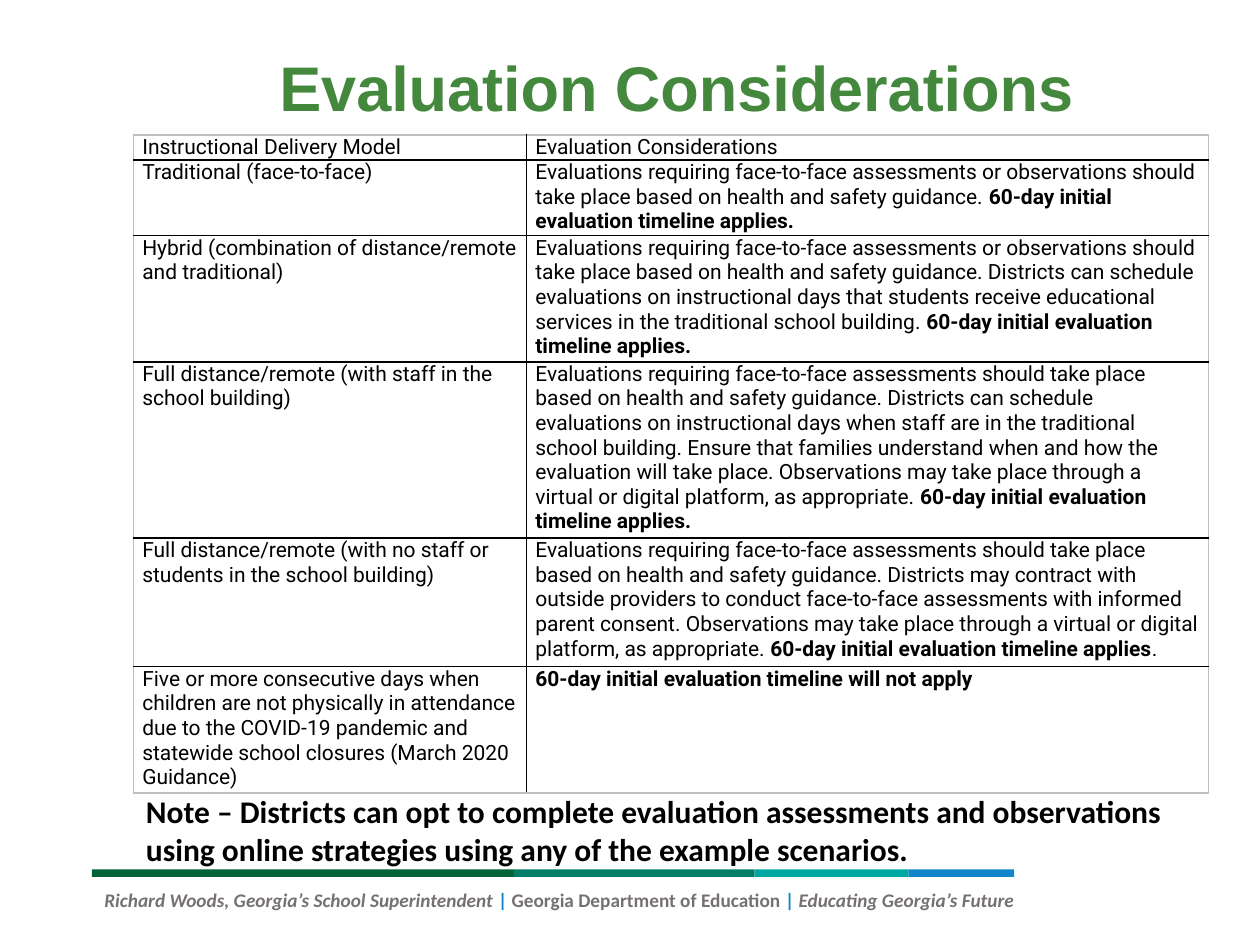
from lxml import etree
from pptx import Presentation
from pptx.dml.color import RGBColor
from pptx.enum import shapes, text
from pptx.oxml.ns import qn
from pptx.util import Inches, Pt

THEME = {
    "title": {"font": "Arial", "size": 36, "color": "44883E", "bold": True},
    "cell": {"font": "Roboto", "size": 12, "color": "000000"},
    "note": {"font": "Calibri", "size": 18, "color": "000000", "bold": True},
    "foot": {"font": "Calibri", "size": 11, "color": "767171", "bold": True},
    "bar": "1186CA",
    "grid": "000000",
    "frame": "BFBFBF",
}

TITLE = "Evaluation Considerations"
NOTE = ("Note – Districts can opt to complete evaluation assessments and observations "
        "using online strategies using any of the example scenarios.")
# Footer runs: text, italic, color
FOOTER = [
    ("Richard Woods, Georgia’s School Superintendent ", True, THEME["foot"]["color"]),
    ("|", False, THEME["bar"]),
    (" Georgia Department of Education ", False, THEME["foot"]["color"]),
    ("| ", False, THEME["bar"]),
    ("Educating Georgia’s Future", True, THEME["foot"]["color"]),
]
STRIPES = [(3.35, "006436"), (1.91, "007E67"), (1.22, "00A9A1"), (0.84, "1186CA")]

OBSERVE = "Evaluations requiring face-to-face assessments or observations should "
ASSESS = "Evaluations requiring face-to-face assessments should "
SAFETY = "take place based on health and safety guidance. "
DIGITAL = ("Observations may take place through a virtual or digital platform, "
           "as appropriate. ")
LIMIT = "60-day initial evaluation timeline applies"

# Row height, model, then considerations as alternating plain and bold parts
ROWS = [
    (0.17, "Instructional Delivery Model", ["Evaluation Considerations"]),
    (0.51, "Traditional (face-to-face)", [OBSERVE + SAFETY, LIMIT + "."]),
    (0.85, "Hybrid (combination of distance/remote and traditional)",
     [OBSERVE + SAFETY + "Districts can schedule evaluations on instructional days "
      "that students receive educational services in the traditional school building. ",
      LIMIT + "."]),
    (1.19, "Full distance/remote (with staff in the school building)",
     [ASSESS + SAFETY + "Districts can schedule evaluations on instructional days "
      "when staff are in the traditional school building. Ensure that families "
      "understand when and how the evaluation will take place. " + DIGITAL,
      LIMIT + "."]),
    (1.02, "Full distance/remote (with no staff or students in the school building)",
     [ASSESS + SAFETY + "Districts may contract with outside providers to conduct "
      "face-to-face assessments with informed parent consent. " + DIGITAL,
      LIMIT, "."]),
    (0.85, "Five or more consecutive days when children are not physically in attendance "
     "due to the COVID-19 pandemic and statewide school closures (March 2020 Guidance)",
     ["", "60-day initial evaluation timeline will not apply"]),
]
COLS = [3.12, 5.41]
LEFT = 1.06


def style(font, look, **extra):
    look = {**look, **extra}
    font.name = look["font"]
    font.size = Pt(look["size"])
    font.bold = look.get("bold", False)
    font.italic = look.get("italic", False)
    font.color.rgb = RGBColor.from_string(look["color"])


def add_run(para, words, look, **extra):
    run = para.add_run()
    run.text = words
    style(run.font, look, **extra)


def add_box(slide, *place):
    frame = slide.shapes.add_textbox(*map(Inches, place)).text_frame
    frame.word_wrap = True
    return frame


def border(cell, outer):
    """Line all four sides; sides named in outer get the frame color."""
    props = cell._tc.get_or_add_tcPr()
    for side in "LRTB":
        line = etree.SubElement(props, qn(f"a:ln{side}"), w=str(Pt(1)))
        fill = etree.SubElement(line, qn("a:solidFill"))
        color = THEME["frame" if side in outer else "grid"]
        etree.SubElement(fill, qn("a:srgbClr"), val=color)


def add_grid(slide):
    high = sum(row[0] for row in ROWS)
    table = slide.shapes.add_table(
        len(ROWS), len(COLS), Inches(LEFT), Inches(1.07),
        Inches(sum(COLS)), Inches(high)).table
    table.first_row = table.horz_banding = False
    for col, wide in zip(table.columns, COLS):
        col.width = Inches(wide)
    for r, (tall, model, advice) in enumerate(ROWS):
        table.rows[r].height = Inches(tall)
        for c, parts in enumerate(([model], advice)):
            cell = table.cell(r, c)
            cell.margin_left = cell.margin_right = Inches(0.07)
            cell.margin_top = cell.margin_bottom = 0
            outer = "LR"[c]
            if r == 0:
                outer += "T"
            if r == len(ROWS) - 1:
                outer += "B"
            border(cell, outer)
            cell.fill.background()
            para = cell.text_frame.paragraphs[0]
            for i, words in enumerate(parts):
                if words:
                    add_run(para, words, THEME["cell"], bold=i % 2 == 1)


def add_footer(slide):
    x = 0.73
    for wide, color in STRIPES:
        bar = slide.shapes.add_shape(
            shapes.MSO_SHAPE.RECTANGLE, Inches(x), Inches(6.9), Inches(wide), Inches(0.06))
        bar.shadow.inherit = False
        bar.fill.solid()
        bar.fill.fore_color.rgb = RGBColor.from_string(color)
        bar.line.fill.background()
        x += wide
    para = add_box(slide, 0.73, 7, 9.42, 0.47).paragraphs[0]
    for words, slant, color in FOOTER:
        add_run(para, words, THEME["foot"], italic=slant, color=color)


def add_title(slide):
    title = slide.shapes.title
    title.left, title.top, title.width, title.height = map(Inches, (LEFT, 0, 8.62, 1.45))
    frame = title.text_frame
    frame.text = TITLE
    frame.auto_size = text.MSO_AUTO_SIZE.NONE
    frame.vertical_anchor = text.MSO_ANCHOR.MIDDLE
    para = frame.paragraphs[0]
    para.alignment = text.PP_ALIGN.CENTER
    para.line_spacing = 0.9
    style(para.runs[0].font, THEME["title"])


def main():
    deck = Presentation()
    deck.slide_width, deck.slide_height = Inches(10), Inches(7.5)
    slide = deck.slides.add_slide(deck.slide_layouts[5])
    add_footer(slide)
    add_title(slide)
    add_grid(slide)
    note = add_box(slide, LEFT, 6.24, 8.51, 0.71)
    note.text = NOTE
    style(note.paragraphs[0].runs[0].font, THEME["note"])
    deck.save("out.pptx")


if __name__ == "__main__":
    main()
